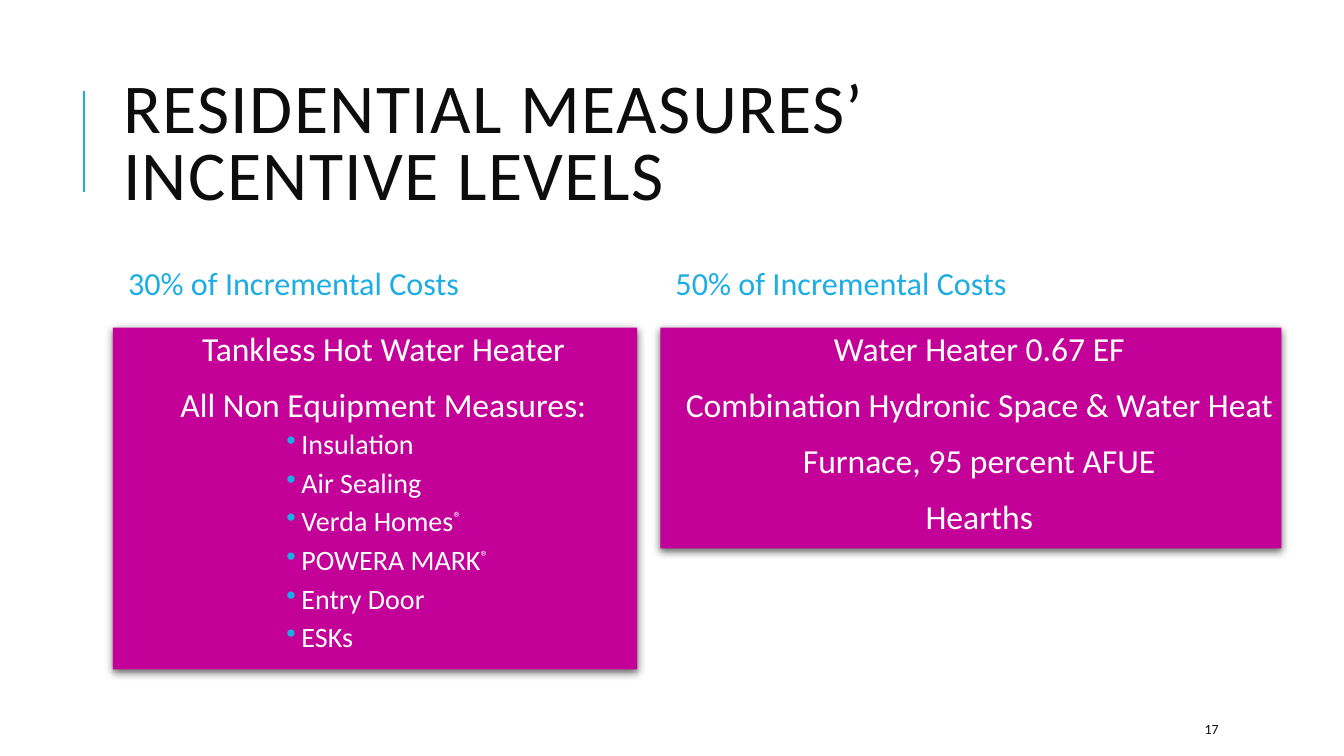
from lxml.etree import SubElement
from pptx import Presentation
from pptx.dml.color import RGBColor
from pptx.enum.shapes import MSO_CONNECTOR, MSO_SHAPE
from pptx.enum.text import MSO_ANCHOR, MSO_AUTO_SIZE, PP_ALIGN
from pptx.oxml.ns import qn
from pptx.util import Inches, Pt

BLUE = RGBColor(0x1C, 0xAD, 0xE4)
MAGENTA = RGBColor(0xC3, 0x01, 0x99)
WHITE = RGBColor(0xFF, 0xFF, 0xFF)
INK = RGBColor(0x0D, 0x0D, 0x0D)


class IncentiveSlide:
    """Holds the style and the current slide, and draws each kind of element."""

    font_name = "Calibri"
    heading_top, heading_height = 2.38, 0.9
    card_top = 3.25

    def __init__(self, presentation):
        self.slide = presentation.slides.add_slide(presentation.slide_layouts[5])

    def set_frame(self, shape, anchor, side=0.1):
        frame = shape.text_frame
        frame.word_wrap = True
        frame.auto_size = MSO_AUTO_SIZE.NONE
        frame.vertical_anchor = anchor
        frame.margin_left = frame.margin_right = Inches(side)
        frame.margin_top = frame.margin_bottom = Inches(0.05)
        return frame

    def add_run(self, paragraph, text, size, color):
        run = paragraph.add_run()
        run.text = text
        run.font.name = self.font_name
        run.font.size = Pt(size)
        run.font.color.rgb = color
        return run

    def add_title(self, text, left, top, width, height):
        title = self.slide.shapes.title
        title.left, title.top = Inches(left), Inches(top)
        title.width, title.height = Inches(width), Inches(height)
        paragraph = self.set_frame(title, MSO_ANCHOR.MIDDLE).paragraphs[0]
        paragraph.alignment = PP_ALIGN.LEFT
        paragraph.line_spacing = 0.8
        run = self.add_run(paragraph, text, 50, INK)
        run._r.get_or_add_rPr().set("spc", "100")

    def add_rule(self, left, top, bottom):
        rule = self.slide.shapes.add_connector(
            MSO_CONNECTOR.STRAIGHT, Inches(left), Inches(bottom), Inches(left), Inches(top))
        rule.line.color.rgb = BLUE
        rule.line.width = Pt(1.5)
        SubElement(rule._element.spPr, qn("a:effectLst"))

    def add_text(self, text, left, top, width, height, size, color, side=0.1, spacing=1.0):
        box = self.slide.shapes.add_textbox(
            Inches(left), Inches(top), Inches(width), Inches(height))
        paragraph = self.set_frame(box, MSO_ANCHOR.MIDDLE, side).paragraphs[0]
        paragraph.line_spacing = spacing
        self.add_run(paragraph, text, size, color)

    def add_shadow(self, shape):
        shape.shadow.inherit = False
        effects = shape._element.spPr.find(qn("a:effectLst"))
        shadow = SubElement(effects, qn("a:outerShdw"), blurRad=str(Pt(6)), dist=str(Pt(2)),
                            dir="5400000", algn="ctr", rotWithShape="0")
        color = SubElement(shadow, qn("a:srgbClr"), val="000000")
        SubElement(color, qn("a:alpha"), val="60000")

    def format_item(self, paragraph, is_detail):
        paragraph.alignment = PP_ALIGN.LEFT if is_detail else PP_ALIGN.CENTER
        paragraph.level = 1 if is_detail else 0
        paragraph.line_spacing = 0.9
        paragraph.space_before = Pt(2 if is_detail else 12)
        paragraph.space_after = Pt(4 if is_detail else 2)
        properties = paragraph._p.get_or_add_pPr()
        properties.set("marL", str(Inches(1.82 if is_detail else 0.1)))
        properties.set("indent", str(Inches(-0.15 if is_detail else -0.1)))
        bullet_color = SubElement(properties, qn("a:buClr"))
        SubElement(bullet_color, qn("a:srgbClr"), val=str(BLUE))
        SubElement(properties, qn("a:buChar"), char="•" if is_detail else " ")

    def add_item(self, paragraph, text, is_detail):
        self.format_item(paragraph, is_detail)
        size = 20 if is_detail else 24
        name, mark, _ = text.partition("®")
        self.add_run(paragraph, name, size, WHITE)
        if mark:
            run = self.add_run(paragraph, mark, size, WHITE)
            run._r.get_or_add_rPr().set("baseline", "30000")

    def add_card(self, left, width, height, measures, details):
        card = self.slide.shapes.add_shape(
            MSO_SHAPE.RECTANGLE, Inches(left), Inches(self.card_top),
            Inches(width), Inches(height))
        card.fill.solid()
        card.fill.fore_color.rgb = MAGENTA
        card.line.fill.background()
        self.add_shadow(card)
        frame = self.set_frame(card, MSO_ANCHOR.TOP, 0.05)
        items = [(text, False) for text in measures] + [(text, True) for text in details]
        for index, (text, is_detail) in enumerate(items):
            paragraph = frame.add_paragraph() if index else frame.paragraphs[0]
            self.add_item(paragraph, text, is_detail)

    def add_column(self, heading, left, width, height, measures, details=()):
        self.add_text(heading, left, self.heading_top, 5.2, self.heading_height,
                      23, BLUE, side=0.15, spacing=0.9)
        self.add_card(left, width, height, measures, details)


def main():
    presentation = Presentation()
    presentation.slide_width = Inches(13.33)
    presentation.slide_height = Inches(7.5)
    page = IncentiveSlide(presentation)
    page.add_rule(0.83, 0.9, 1.9)
    page.add_title("RESIDENTIAL MEASURES’ INCENTIVE LEVELS", 1.12, 0.64, 10.63, 1.64)
    page.add_column(
        "30% of Incremental Costs", 1.12, 5.2, 3.39,
        ["Tankless Hot Water Heater", "All Non Equipment Measures:"],
        ["Insulation", "Air Sealing", "Verda Homes®", "POWERA MARK®", "Entry Door", "ESKs"])
    page.add_column(
        "50% of Incremental Costs", 6.55, 6.16, 2.19,
        ["Water Heater 0.67 EF", "Combination Hydronic Space & Water Heat",
         "Furnace, 95 percent AFUE", "Hearths"])
    page.add_text("17", 11.85, 7.08, 1.06, 0.3, 10, INK)
    presentation.save("out.pptx")


if __name__ == "__main__":
    main()
